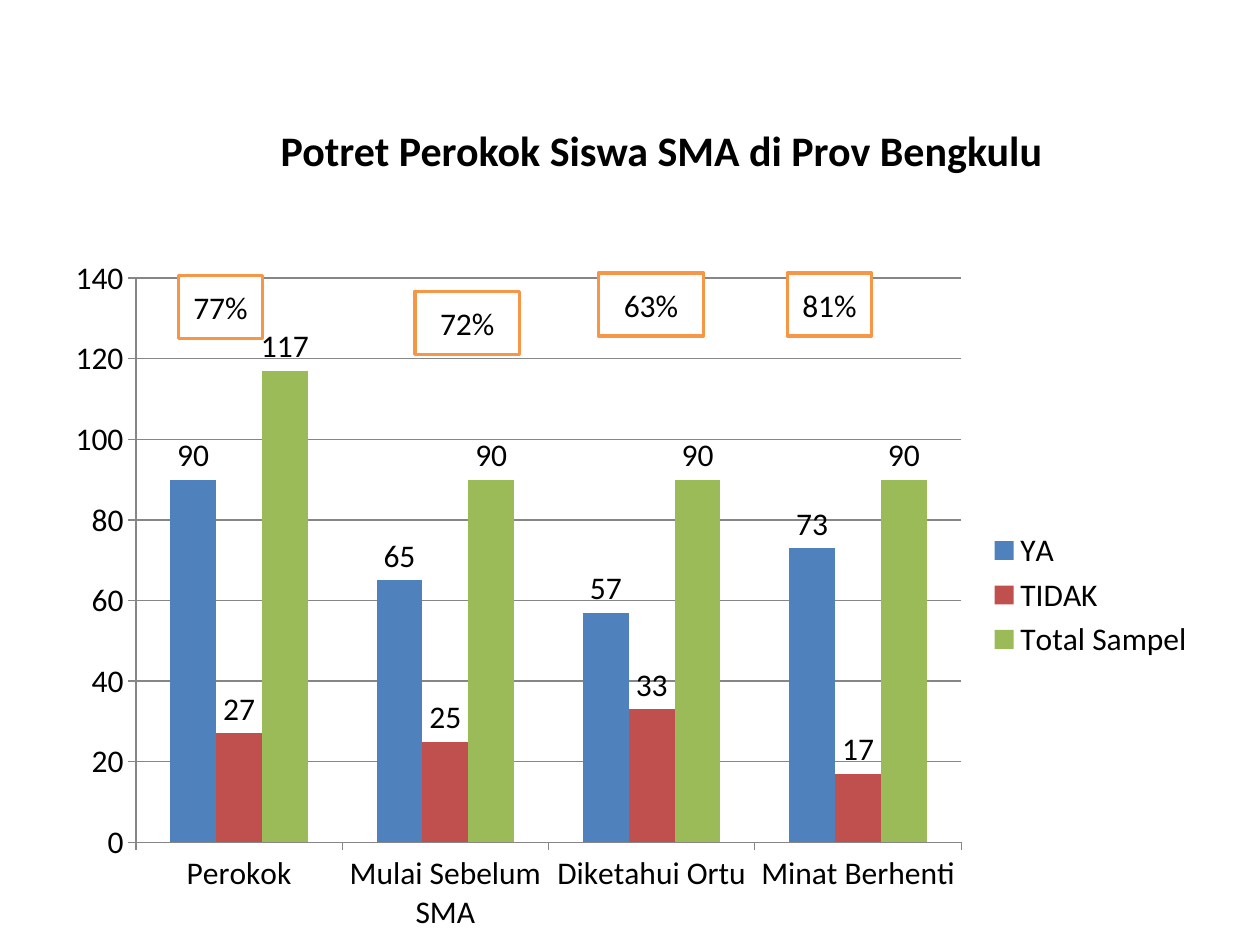
import pptx
import pptx.chart.data
import pptx.dml.color
import pptx.enum.chart
import pptx.enum.shapes
import pptx.enum.text
import pptx.util

Pt = pptx.util.Pt
FONT = "Calibri"
BLACK, WHITE, ORANGE, GRAY = "000000", "FFFFFF", "F79646", "868686"

CATEGORIES = ["Perokok", "Mulai Sebelum SMA", "Diketahui Ortu", "Minat Berhenti"]
SERIES = [
    ("YA", [90, 65, 57, 73], "4F81BD"),
    ("TIDAK", [27, 25, 33, 17], "C0504D"),
    ("Total Sampel", [117, 90, 90, 90], "9BBB59"),
]
# text, left, top, width
PERCENTAGES = [
    ("77%", 102, 157.5, 48),
    ("72%", 237, 166.5, 60),
    ("63%", 342, 156, 60),
    ("81%", 450, 156, 48),
]


def rgb(color):
    return pptx.dml.color.RGBColor.from_string(color)


def format_font(font, size, bold=False):
    for name, value in {"name": FONT, "size": Pt(size), "bold": bold}.items():
        setattr(font, name, value)
    font.color.rgb = rgb(BLACK)


def place(sp, left, top, width, height):
    bounds = {"left": left, "top": top, "width": width, "height": height}
    for name, value in bounds.items():
        setattr(sp, name, Pt(value))


def write_centred(sp, text, size, bold=False):
    tf = sp.text_frame
    tf.word_wrap = True
    tf.vertical_anchor = pptx.enum.text.MSO_ANCHOR.MIDDLE
    p = tf.paragraphs[0]
    p.text = text
    p.alignment = pptx.enum.text.PP_ALIGN.CENTER
    for r in p.runs:
        format_font(r.font, size, bold)


def add_title(s, text):
    sp = s.shapes.title
    place(sp, 54, 24, 648, 70)
    write_centred(sp, text, 24, bold=True)


def format_axis(axis, gridlines):
    axis.has_major_gridlines = gridlines
    axis.major_tick_mark = pptx.enum.chart.XL_TICK_MARK.OUTSIDE
    lines = [axis.format.line]
    if gridlines:
        lines.append(axis.major_gridlines.format.line)
    for line in lines:
        line.color.rgb = rgb(GRAY)
        line.width = Pt(0.75)


def format_series(series, color):
    series.format.fill.solid()
    series.format.fill.fore_color.rgb = rgb(color)
    series.invert_if_negative = False
    labels = series.data_labels
    labels.show_value = True
    labels.position = pptx.enum.chart.XL_LABEL_POSITION.OUTSIDE_END
    format_font(labels.font, 18)


def add_survey_chart(s):
    data = pptx.chart.data.CategoryChartData()
    data.categories = CATEGORIES
    for name, values, _ in SERIES:
        data.add_series(name, values)
    kind = pptx.enum.chart.XL_CHART_TYPE.COLUMN_CLUSTERED
    chart = s.shapes.add_chart(kind, Pt(30), Pt(140), Pt(660), Pt(400), data).chart
    format_font(chart.font, 18)
    chart.has_title = False
    chart.has_legend = True
    chart.legend.position = pptx.enum.chart.XL_LEGEND_POSITION.RIGHT
    chart.legend.include_in_layout = False
    plot = chart.plots[0]
    plot.gap_width = 150
    plot.vary_by_categories = False
    format_axis(chart.category_axis, gridlines=False)
    format_axis(chart.value_axis, gridlines=True)
    for series, (_, _, color) in zip(plot.series, SERIES):
        format_series(series, color)


def add_percentage(s, text, left, top, width):
    kind = pptx.enum.shapes.MSO_SHAPE.RECTANGLE
    sp = s.shapes.add_shape(kind, Pt(left), Pt(top), Pt(width), Pt(36))
    sp.shadow.inherit = False
    sp.fill.solid()
    sp.fill.fore_color.rgb = rgb(WHITE)
    sp.line.color.rgb = rgb(ORANGE)
    sp.line.width = Pt(2)
    write_centred(sp, text, 18)


def main():
    prs = pptx.Presentation()
    prs.slide_width, prs.slide_height = Pt(720), Pt(540)
    s = prs.slides.add_slide(prs.slide_layouts[5])
    add_title(s, "\vPotret Perokok Siswa SMA di Prov Bengkulu")
    add_survey_chart(s)
    for percentage in PERCENTAGES:
        add_percentage(s, *percentage)
    prs.save("out.pptx")


if __name__ == "__main__":
    main()
